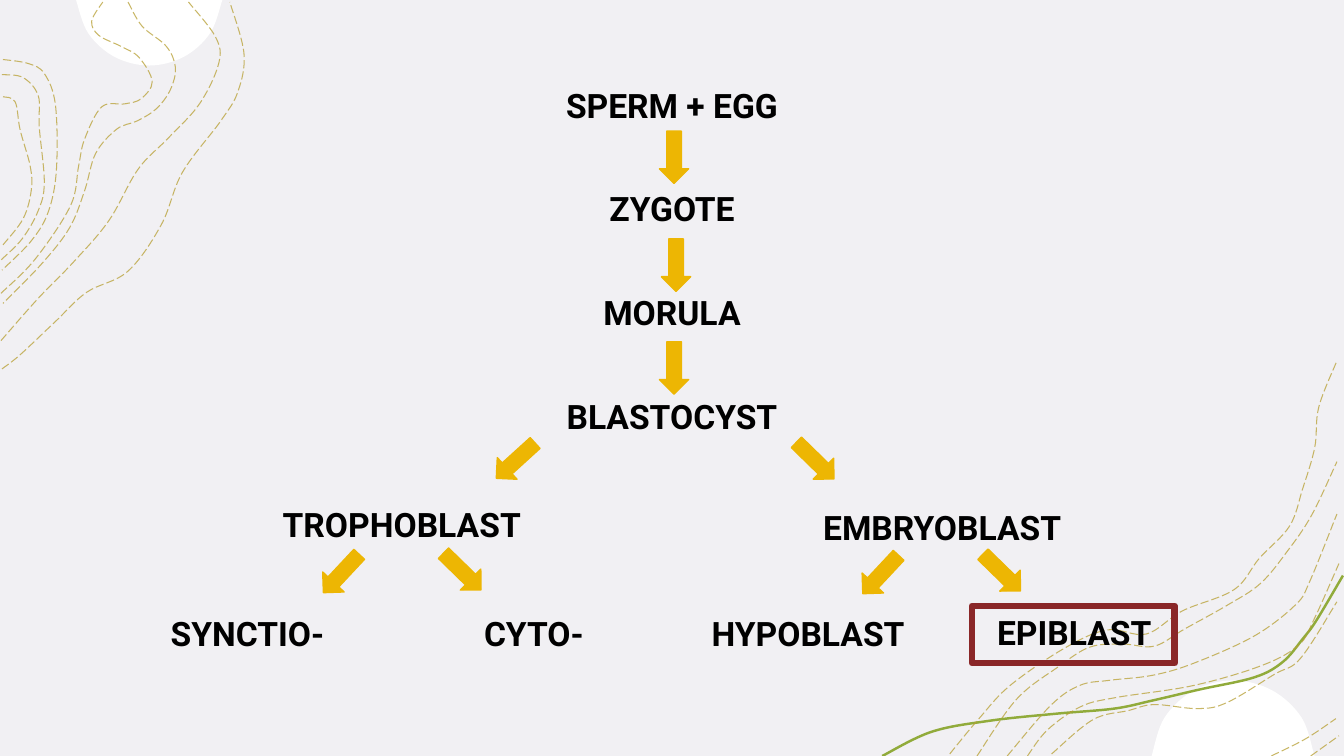
import math

from lxml import etree
from pptx import Presentation
from pptx.dml.color import RGBColor
from pptx.enum.dml import MSO_LINE
from pptx.enum.shapes import MSO_SHAPE
from pptx.enum.text import MSO_AUTO_SIZE, PP_ALIGN
from pptx.oxml.ns import qn
from pptx.util import Inches, Pt

DOWN_ARROW, RECTANGLE = MSO_SHAPE.DOWN_ARROW, MSO_SHAPE.RECTANGLE
LONG_DASH, CENTER, GROW = MSO_LINE.LONG_DASH, PP_ALIGN.CENTER, MSO_AUTO_SIZE.SHAPE_TO_FIT_TEXT
WIDTH, HEIGHT = 13.33, 7.5

COLORS = {"background": "F1F0F3", "circle": "FFFFFF", "contour": "B8A034", "band": "91AB3B",
          "text": "000000", "arrow": "EDB603", "highlight": "8A2728"}
LABEL_FONT = {"name": "Roboto", "size": Pt(24), "bold": True}
LABEL_FRAME = {"word_wrap": True, "auto_size": GROW}

# Points that each contour line passes through
TOP_LEFT_CONTOURS = [
    [(0.02, 3.66), (0.2, 3.52), (0.55, 3.19), (0.86, 2.9), (1.27, 2.69), (1.6, 2.23),
     (1.81, 1.71), (2.19, 1.2), (2.36, 0.91), (2.42, 0.53), (2.28, 0.02)],
    [(0.01, 3.38), (0.38, 2.96), (0.73, 2.6), (1.08, 2.19), (1.37, 1.68), (1.67, 1.37),
     (1.98, 1.03), (2.17, 0.63), (2.14, 0.37), (1.87, 0.02)],
    [(1.27, 0.02), (1.41, 0.26), (1.65, 0.46), (1.74, 0.67), (1.69, 0.89), (1.55, 1.08),
     (1.36, 1.2), (1.16, 1.28), (0.95, 1.52), (0.84, 1.89), (0.69, 2.26), (0.42, 2.61),
     (0.03, 3.01)],
    [(0.01, 2.91), (0.35, 2.57), (0.7, 2.04), (0.78, 1.65), (0.84, 1.38), (1.01, 1.06),
     (1.24, 1.03), (1.4, 0.98), (1.51, 0.81), (1.38, 0.57), (1.2, 0.46), (0.98, 0.35),
     (0.91, 0.21), (1.02, 0.02)],
    [(0.03, 0.59), (0.28, 0.63), (0.44, 0.73), (0.55, 1.04), (0.56, 1.68), (0.48, 2.1),
     (0.31, 2.39), (0.02, 2.68)],
    [(0.02, 0.74), (0.23, 0.77), (0.38, 0.95), (0.39, 1.26), (0.44, 1.81), (0.38, 2.09),
     (0.22, 2.37), (0.01, 2.58)],
    [(0.03, 0.96), (0.15, 1.01), (0.2, 1.29), (0.3, 1.65), (0.31, 1.89), (0.23, 2.17),
     (0.03, 2.43)],
]
BOTTOM_RIGHT_CONTOURS = [
    [(9.42, 7.48), (9.71, 7.13), (10.02, 6.8), (10.56, 6.43), (10.98, 6.25), (11.37, 6.29),
     (11.73, 6.06), (12.24, 5.85), (12.49, 5.54), (12.79, 5.22), (12.92, 4.85),
     (13.04, 4.44), (13.08, 4.04), (13.26, 3.58)],
    [(9.69, 7.5), (10.08, 6.94), (10.49, 6.62), (10.81, 6.42), (11.14, 6.39), (11.45, 6.41),
     (11.75, 6.24), (12.18, 6), (12.5, 5.79), (12.76, 5.48), (13.01, 5.11), (13.26, 4.58)],
    [(13, 7.5), (13.28, 7.3)],
    [(12.61, 7.5), (12.95, 7.33), (13.25, 7.13)],
    [(10.43, 7.48), (10.84, 7.14), (11.19, 7.05), (11.45, 6.99), (11.88, 7.03),
     (12.17, 6.97), (12.64, 6.69), (12.9, 6.53), (13.26, 5.97)],
    [(10.19, 7.5), (10.39, 7.24), (10.72, 7.01), (11.07, 6.92), (11.84, 6.8), (12.52, 6.6),
     (12.88, 6.4), (13.03, 6.15), (13.28, 5.59)],
    [(9.99, 7.5), (10.42, 7), (10.71, 6.8), (11, 6.75), (11.43, 6.7), (11.84, 6.58),
     (12.44, 6.31), (12.85, 6), (12.99, 5.77), (13.26, 5.1)],
]
GREEN_BAND = [(13.32, 5.71), (13.06, 6.15), (12.92, 6.34), (12.72, 6.57), (12.44, 6.72),
              (11.9, 6.84), (11.43, 6.95), (11.05, 7.03), (10.48, 7.08), (9.82, 7.15),
              (9.24, 7.26), (8.75, 7.5)]
# Centre, radius, cutting slide edge and direction of each white circle
CIRCLES = [(1.48, -0.08, 0.73, 0, 1), (12.23, 7.56, 0.81, HEIGHT, -1)]

# Left and top of each label
MAIN_STAGES = ["SPERM + EGG", "ZYGOTE", "MORULA", "BLASTOCYST"]
LINEAGES = {"TROPHOBLAST": (2.57, 4.95), "EMBRYOBLAST": (7.93, 4.98),
            "SYNCTIO-": (1.04, 6.03), "CYTO-": (3.88, 6.03),
            "HYPOBLAST": (6.6, 6.03), "EPIBLAST": (9.24, 6.02)}
# Left, top and rotation of each arrow
ARROWS = [(6.54, 1.3, 0), (6.56, 2.37, 0), (6.54, 3.39, 0),
          (4.97, 4.31, 47.7), (7.94, 4.31, 314.3), (3.24, 5.43, 43),
          (4.44, 5.41, 314.3), (8.59, 5.44, 43), (9.79, 5.42, 314.3)]


def arc(cx, cy, radius, edge, direction, steps=6):
    """Points on the part of a circle that lies inside the slide edge."""
    half = math.acos(abs(cy - edge) / radius)
    angles = [half * (2 * i / steps - 1) for i in range(steps + 1)]
    return [(cx + radius * math.sin(a), cy + direction * radius * math.cos(a)) for a in angles]


def smooth(shape):
    """Turn the straight segments of a freeform into Bézier curves."""
    outline = shape._element.spPr
    points = [(int(pt.get("x")), int(pt.get("y"))) for pt in outline.iter(qn("a:pt"))]
    padded = [points[0], *points, points[-1]]
    segments = list(outline.iter(qn("a:lnTo")))
    for segment, a, b, c, d in zip(segments, padded, padded[1:], padded[2:], padded[3:]):
        controls = ([q + (r - p) / 6 for p, q, r in zip(a, b, c)],
                    [r - (s - q) / 6 for q, r, s in zip(b, c, d)])
        segment.tag = qn("a:cubicBezTo")
        for index, (x, y) in enumerate(controls):
            segment.insert(index, etree.Element(qn("a:pt"), x=str(round(x)), y=str(round(y))))


class SlideBuilder:
    def __init__(self, slide):
        self.slide = slide
        slide.background.fill.solid()
        slide.background.fill.fore_color.rgb = self.color("background")

    def color(self, key):
        return RGBColor.from_string(COLORS[key])

    def paint(self, shape, fill=None, line=None, weight=1):
        shape.shadow.inherit = False
        for target, key in ((shape.fill, fill), (shape.line.fill, line)):
            if key:
                target.solid()
                target.fore_color.rgb = self.color(key)
            else:
                target.background()
        if line:
            shape.line.width = Pt(weight)
        return shape

    def curve(self, points, shapes=None, close=False, **style):
        (x, y), *rest = [(Inches(px), Inches(py)) for px, py in points]
        builder = (shapes or self.slide.shapes).build_freeform(x, y)
        builder.add_line_segments(rest, close=close)
        shape = builder.convert_to_shape()
        smooth(shape)
        return self.paint(shape, **style)

    def contours(self, lines):
        group = self.slide.shapes.add_group_shape()
        for points in lines:
            contour = self.curve(points, group.shapes, line="contour", weight=0.75)
            contour.line.dash_style = LONG_DASH
            rgb = next(contour.line._ln.iter(qn("a:srgbClr")))
            etree.SubElement(rgb, qn("a:alpha"), val="75000")

    def label(self, text, left, top):
        frame = self.slide.shapes.add_textbox(
            Inches(left), Inches(top), Inches(2.83), Inches(0.5)).text_frame
        for name, value in LABEL_FRAME.items():
            setattr(frame, name, value)
        paragraph = frame.paragraphs[0]
        paragraph.alignment = CENTER
        run = paragraph.add_run()
        run.text = text
        for name, value in LABEL_FONT.items():
            setattr(run.font, name, value)
        run.font.color.rgb = self.color("text")

    def shape(self, kind, left, top, width, height, rotation=0, **style):
        box = [Inches(v) for v in (left, top, width, height)]
        shape = self.slide.shapes.add_shape(kind, *box)
        shape.rotation = rotation
        self.paint(shape, **style)


def main():
    prs = Presentation()
    prs.slide_width, prs.slide_height = Inches(WIDTH), Inches(HEIGHT)
    page = SlideBuilder(prs.slides.add_slide(prs.slide_layouts[6]))

    # Decoration in the corners
    for circle in CIRCLES:
        page.curve(arc(*circle), close=True, fill="circle")
    page.curve(GREEN_BAND, line="band", weight=1.75)
    page.contours(TOP_LEFT_CONTOURS)
    page.contours(BOTTOM_RIGHT_CONTOURS)

    # Stages and lineages
    for row, stage in enumerate(MAIN_STAGES):
        page.label(stage, 5.25, 0.79 + 1.03 * row)
    for lineage, place in LINEAGES.items():
        page.label(lineage, *place)

    # Arrows and the highlighted outcome
    for left, top, rotation in ARROWS:
        page.shape(DOWN_ARROW, left, top, 0.29, 0.52, rotation, fill="arrow", line="arrow")
    page.shape(RECTANGLE, 9.64, 6.01, 2.01, 0.57, line="highlight", weight=4.5)

    prs.save("out.pptx")


if __name__ == "__main__":
    main()
